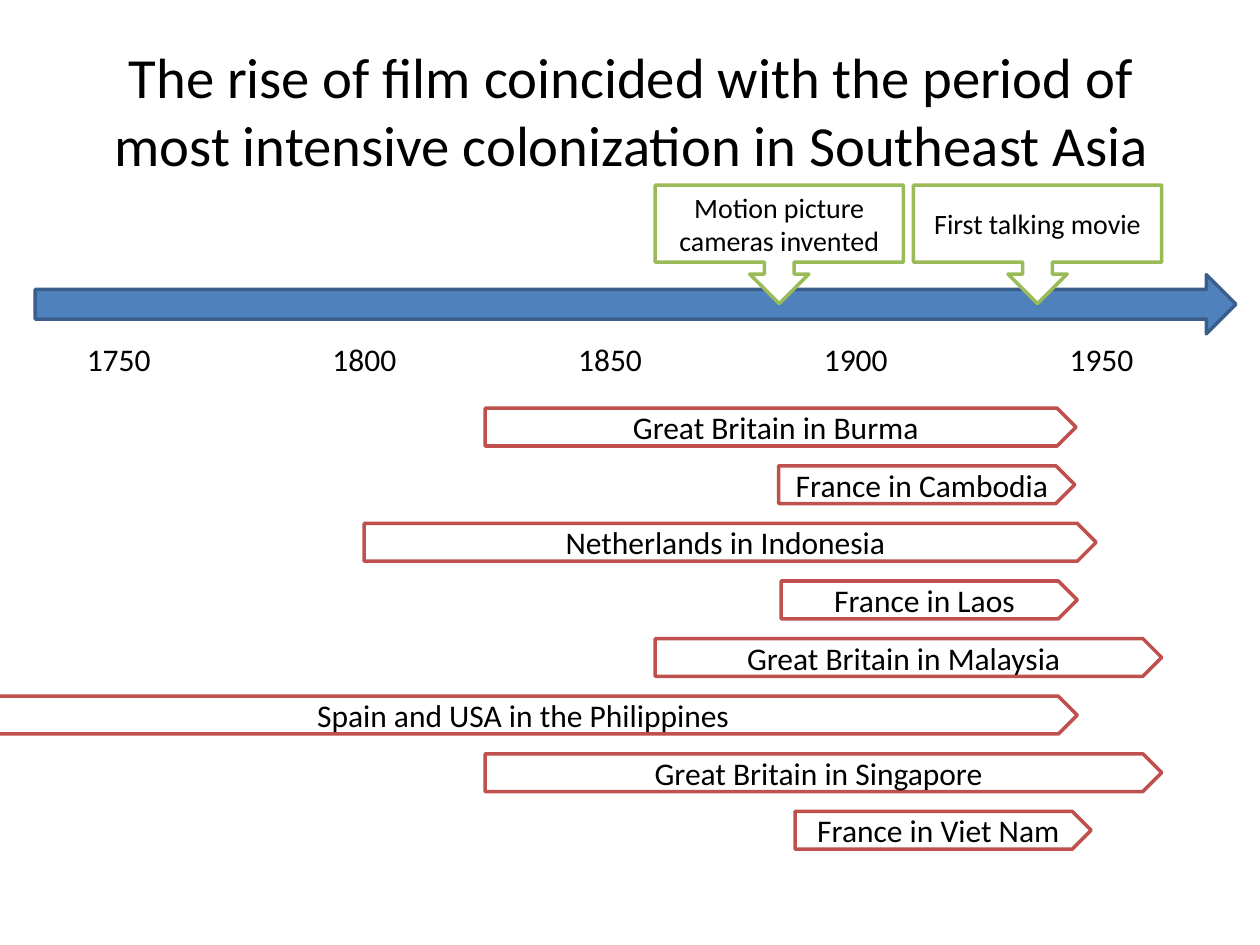
from pptx import Presentation
from pptx.dml.color import RGBColor
from pptx.enum import shapes, text
from pptx.util import Inches, Pt

FONT = "Calibri"
YEARS = ["1750", "1800", "1850", "1900", "1950"]
YEAR_LEFT, YEAR_STEP = 0.59, 1.95
EVENTS = [("Motion picture cameras invented", 5.2), ("First talking movie", 7.25)]
BAR_TOP, LAST_BAR_TOP = 3.24, 6.44
# Label, left and width in inches
COLONIES = [
    ("Great Britain in Burma", 3.85, 4.69),
    ("France in Cambodia", 6.18, 2.35),
    ("Netherlands in Indonesia", 2.89, 5.81),
    ("France in Laos", 6.2, 2.35),
    ("Great Britain in Malaysia", 5.2, 4.02),
    ("Spain and USA in the Philippines", -0.17, 8.72),
    ("Great Britain in Singapore", 3.85, 5.37),
    ("France in Viet Nam", 6.31, 2.35),
]


def rgb(value):
    return RGBColor.from_string(value)


def write(sp, words, size=18, color="000000", align=text.PP_ALIGN.CENTER,
          anchor=text.MSO_ANCHOR.MIDDLE):
    tf = sp.text_frame
    tf.word_wrap = True
    tf.auto_size = text.MSO_AUTO_SIZE.NONE
    tf.vertical_anchor = anchor
    p = tf.paragraphs[0]
    p.alignment = align
    r = p.add_run()
    r.text = words
    r.font.name = FONT
    r.font.size = Pt(size)
    r.font.color.rgb = rgb(color)


def add_text(slide, words, left, top, width, height, **fmt):
    sp = slide.shapes.add_textbox(*map(Inches, (left, top, width, height)))
    write(sp, words, **fmt)
    return sp


def add_shape(slide, kind, left, top, width, height, line, fill="FFFFFF"):
    sp = slide.shapes.add_shape(kind, *map(Inches, (left, top, width, height)))
    sp.shadow.inherit = False
    sp.fill.solid()
    sp.fill.fore_color.rgb = rgb(fill)
    sp.line.color.rgb = rgb(line)
    sp.line.width = Pt(2)
    return sp


def add_title(slide):
    title = add_text(
        slide,
        "The rise of film coincided with the period of "
        "most intensive colonization in Southeast Asia",
        0.51, 0.52, 9, 1.25, size=32.4)
    # The deep bottom inset lifts the text clear of the callouts
    title.text_frame.margin_bottom = Inches(0.6)


def add_timeline(slide):
    add_shape(slide, shapes.MSO_SHAPE.RIGHT_ARROW, 0.28, 2.18, 9.53, 0.47,
              line="3A5F8C", fill="4F81BD")
    for i, year in enumerate(YEARS):
        add_text(slide, year, YEAR_LEFT + i * YEAR_STEP, 2.65, 0.71, 0.4,
                 align=text.PP_ALIGN.LEFT, anchor=text.MSO_ANCHOR.TOP)


def add_events(slide):
    for label, left in EVENTS:
        sp = add_shape(slide, shapes.MSO_SHAPE.DOWN_ARROW_CALLOUT,
                       left, 1.47, 1.97, 0.94, line="9BBB59")
        write(sp, label, size=16)


def add_colonies(slide):
    step = (LAST_BAR_TOP - BAR_TOP) / (len(COLONIES) - 1)
    for i, (label, left, width) in enumerate(COLONIES):
        sp = add_shape(slide, shapes.MSO_SHAPE.PENTAGON,
                       left, BAR_TOP + i * step, width, 0.3, line="C0504D")
        write(sp, label)


def main():
    prs = Presentation()
    prs.slide_width, prs.slide_height = Inches(10), Inches(7.5)
    slide = prs.slides.add_slide(prs.slide_layouts[6])
    add_title(slide)
    add_timeline(slide)
    add_events(slide)
    add_colonies(slide)
    prs.save("out.pptx")


if __name__ == "__main__":
    main()
